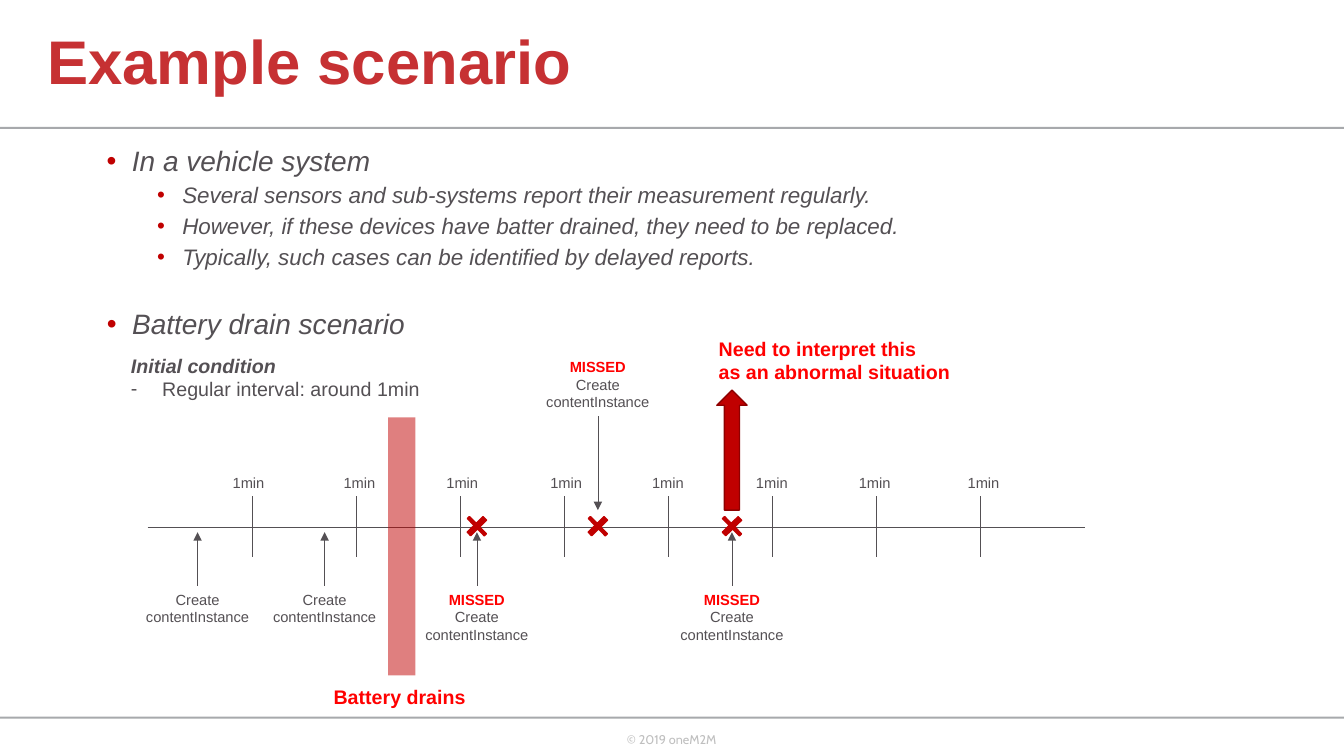
from lxml.etree import SubElement
from pptx import Presentation
from pptx.dml.color import RGBColor
from pptx.enum.shapes import MSO_CONNECTOR, MSO_SHAPE
from pptx.enum.text import MSO_ANCHOR, MSO_AUTO_SIZE, PP_ALIGN
from pptx.oxml import parse_xml
from pptx.oxml.ns import nsdecls, qn
from pptx.util import Inches, Pt

# Content
TITLE = "Example scenario"
COPYRIGHT = "© 2019 oneM2M"
VEHICLE_LIST = [
    ("In a vehicle system", "topic"),
    ("Several sensors and sub-systems report their measurement regularly.", "point"),
    ("However, if these devices have batter drained, they need to be replaced.", "point"),
    ("Typically, such cases can be identified by delayed reports.", "point"),
]
BATTERY_LIST = [("Battery drain scenario", "topic")]
CONDITION = [("Initial condition", "condition"),
             ("Regular interval: around 1min", "dash")]
WARNING = [("Need to interpret this", "alert"), ("as an abnormal situation", "alert")]
DRAIN = [("Battery drains", "alert")]
REPORT = [("Create", "report"), ("contentInstance", "report")]
MISSED_REPORT = [("MISSED", "missed")] + REPORT
TICK_LABEL = [("1min", "small")]
TICK_LABEL_LEFTS = [2.21, 3.31, 4.33, 5.36, 6.37, 7.4, 8.42, 9.5]
# Centre of each report, whether it was missed, whether it sits above the timeline
REPORTS = [(1.96, False, False), (3.22, False, False), (4.73, True, False),
           (5.93, True, True), (7.26, True, False)]

COLORS = {"title": "C63133", "text": "545054", "alert": "FF0000", "red": "C00000",
          "dark red": "8E0000", "rule": "A7A9AC", "footer": "BFBFBF", "white": "FFFFFF"}

# Formats: font values, colour, then paragraph values and bullet
STYLES = {
    "title": {"font": {"size": Pt(44), "bold": True}, "color": "title",
              "para": {"line_spacing": 0.9, "alignment": PP_ALIGN.LEFT}},
    "topic": {"font": {"size": Pt(20), "italic": True}, "color": "text",
              "para": {"line_spacing": 0.9, "space_before": Pt(10)},
              "bullet": ("•", 0.25, 0.25, "red")},
    "point": {"font": {"size": Pt(16), "italic": True}, "color": "text",
              "para": {"level": 1, "line_spacing": 0.9, "space_before": Pt(5)},
              "bullet": ("•", 0.75, 0.25, "red")},
    "condition": {"font": {"size": Pt(14), "bold": True, "italic": True}, "color": "text"},
    "dash": {"font": {"size": Pt(14)}, "color": "text", "bullet": ("-", 0.31, 0.31, "text")},
    "alert": {"font": {"size": Pt(14), "bold": True}, "color": "alert"},
    "small": {"font": {"size": Pt(10.5)}, "color": "text"},
    "report": {"font": {"size": Pt(10.5)}, "color": "text",
               "para": {"alignment": PP_ALIGN.CENTER}},
    "missed": {"font": {"size": Pt(10.5), "bold": True}, "color": "alert",
               "para": {"alignment": PP_ALIGN.CENTER}},
    "footer": {"font": {"size": Pt(9), "name": "Cabin"}, "color": "footer"},
}

# Timeline geometry
TIMELINE_LEFT, TIMELINE_TOP = 1.47, 4.93
INTERVALS, INTERVAL_WIDTH, ROW_HEIGHT = 9, 9.29 / 9, 0.3
REPORT_WIDTH = 1.24


def rgb(name):
    return RGBColor.from_string(COLORS[name])


def apply(target, values):
    for name, value in values.items():
        setattr(target, name, value)


def add_bullet(para, mark, left, hanging, color):
    props = para._p.get_or_add_pPr()
    props.set("marL", str(Inches(left)))
    props.set("indent", str(-Inches(hanging)))
    SubElement(SubElement(props, qn("a:buClr")), qn("a:srgbClr")).set("val", COLORS[color])
    SubElement(props, qn("a:buFont")).set("typeface", "Arial")
    SubElement(props, qn("a:buChar")).set("char", mark)


def write(frame, lines):
    for index, (text, style_name) in enumerate(lines):
        style = STYLES[style_name]
        para = frame.paragraphs[0] if index == 0 else frame.add_paragraph()
        if "bullet" in style:
            add_bullet(para, *style["bullet"])
        apply(para, style.get("para", {}))
        if index == 0:
            para.space_before = Pt(0)
        span = para.add_run()
        span.text = text
        apply(span.font, {"name": "Arial", **style["font"]})
        span.font.color.rgb = rgb(style["color"])


def place(shape, *bounds):
    apply(shape, dict(zip(("left", "top", "width", "height"), map(Inches, bounds))))


def add_text(page, bounds, lines, wrap=False, fit=True):
    box = page.shapes.add_textbox(*map(Inches, bounds))
    frame = box.text_frame
    frame.word_wrap = wrap
    frame.auto_size = MSO_AUTO_SIZE.SHAPE_TO_FIT_TEXT if fit else MSO_AUTO_SIZE.NONE
    write(frame, lines)
    return box


def add_block(page, kind, bounds, fill, line=None):
    shape = page.shapes.add_shape(kind, *map(Inches, bounds))
    shape.shadow.inherit = False
    shape.fill.solid()
    shape.fill.fore_color.rgb = rgb(fill)
    if line:
        shape.line.color.rgb = rgb(line)
        shape.line.width = Pt(1)
    else:
        shape.line.fill.background()
    return shape


def add_timeline(page):
    table = page.shapes.add_table(
        2, INTERVALS, Inches(TIMELINE_LEFT), Inches(TIMELINE_TOP),
        Inches(INTERVAL_WIDTH * INTERVALS), Inches(2 * ROW_HEIGHT)).table
    apply(table, {"first_row": False, "horz_banding": False})
    for row in range(2):
        for col in range(INTERVALS):
            cell = table.cell(row, col)
            apply(cell, {"margin_top": 0, "margin_bottom": 0})
            SubElement(cell.text_frame.paragraphs[0]._p, qn("a:endParaRPr")).set("sz", "1000")
            cell.fill.background()
            # Only the inner borders are visible: the ticks and the time axis
            outer = {"L": col == 0, "R": col == INTERVALS - 1, "T": row == 0, "B": row == 1}
            for order, (side, hidden) in enumerate(outer.items()):
                color = COLORS["white" if hidden else "text"]
                cell._tc.get_or_add_tcPr().insert(order, parse_xml(
                    f'<a:ln{side} {nsdecls("a")} w="12700"><a:solidFill>'
                    f'<a:srgbClr val="{color}"/></a:solidFill></a:ln{side}>'))


def add_report(page, center, missed, above):
    lines = MISSED_REPORT if missed else REPORT
    top, tip = (3.5, 5.06) if above else (5.81, 5.28)
    box = add_text(page, (center - REPORT_WIDTH / 2, top, REPORT_WIDTH, 0.63 if missed else 0.45),
                   lines)
    arrow = page.shapes.add_connector(MSO_CONNECTOR.STRAIGHT, Inches(center), Inches(top),
                                      Inches(center), Inches(tip))
    arrow.begin_connect(box, 2 if above else 0)
    arrow.line.color.rgb = rgb("text")
    arrow.line.width = Pt(0.5)
    SubElement(arrow.line._get_or_add_ln(), qn("a:tailEnd")).set("type", "triangle")
    SubElement(arrow._element.spPr, qn("a:effectLst"))
    if missed:
        cross = add_block(page, MSO_SHAPE.CROSS, (center - 0.12, 5.11, 0.24, 0.22), "red", "red")
        cross.adjustments[0] = 0.434
        cross.rotation = 45.6


def main():
    deck = Presentation()
    deck.slide_width, deck.slide_height = Inches(13.33), Inches(7.5)
    page = deck.slides.add_slide(deck.slide_layouts[1])

    # Rules and copyright line
    for top in (1.26, 7.11):
        add_block(page, MSO_SHAPE.RECTANGLE, (0, top, 13.33, 0.02), "rule")
    add_text(page, (6.12, 7.21, 1.1, 0.4), [(COPYRIGHT, "footer")])

    # Title and lists
    title, body = page.shapes.title, page.placeholders[1]
    place(title, 0.37, 0, 8.59, 1.28)
    place(body, 0.96, 3.03, 9.88, 2.95)
    for holder, lines, anchor in ((title, [(TITLE, "title")], MSO_ANCHOR.MIDDLE),
                                  (body, BATTERY_LIST, MSO_ANCHOR.TOP)):
        apply(holder.text_frame, {"auto_size": MSO_AUTO_SIZE.NONE, "vertical_anchor": anchor})
        write(holder.text_frame, lines)
    add_text(page, (0.96, 1.41, 10.96, 1.49), VEHICLE_LIST, wrap=True, fit=False)
    add_text(page, (1.2, 3.46, 4.02, 0.57), CONDITION, wrap=True)

    # Timeline with its reports
    add_timeline(page)
    for left in TICK_LABEL_LEFTS:
        add_text(page, (left, 4.65, 0.54, 0.29), TICK_LABEL)
    for report in REPORTS:
        add_report(page, *report)

    # Warning and battery drain
    add_block(page, MSO_SHAPE.UP_ARROW, (7.11, 3.87, 0.3, 1.19), "red", "dark red")
    add_text(page, (7.03, 3.29, 2.51, 0.57), WARNING)
    add_text(page, (3.21, 6.75, 1.52, 0.34), DRAIN)
    drain = add_block(page, MSO_SHAPE.RECTANGLE, (3.85, 4.14, 0.27, 2.56), "red")
    tint = drain._element.spPr.find(qn("a:solidFill")).find(qn("a:srgbClr"))
    SubElement(tint, qn("a:alpha")).set("val", "50000")

    deck.save("out.pptx")


if __name__ == "__main__":
    main()
